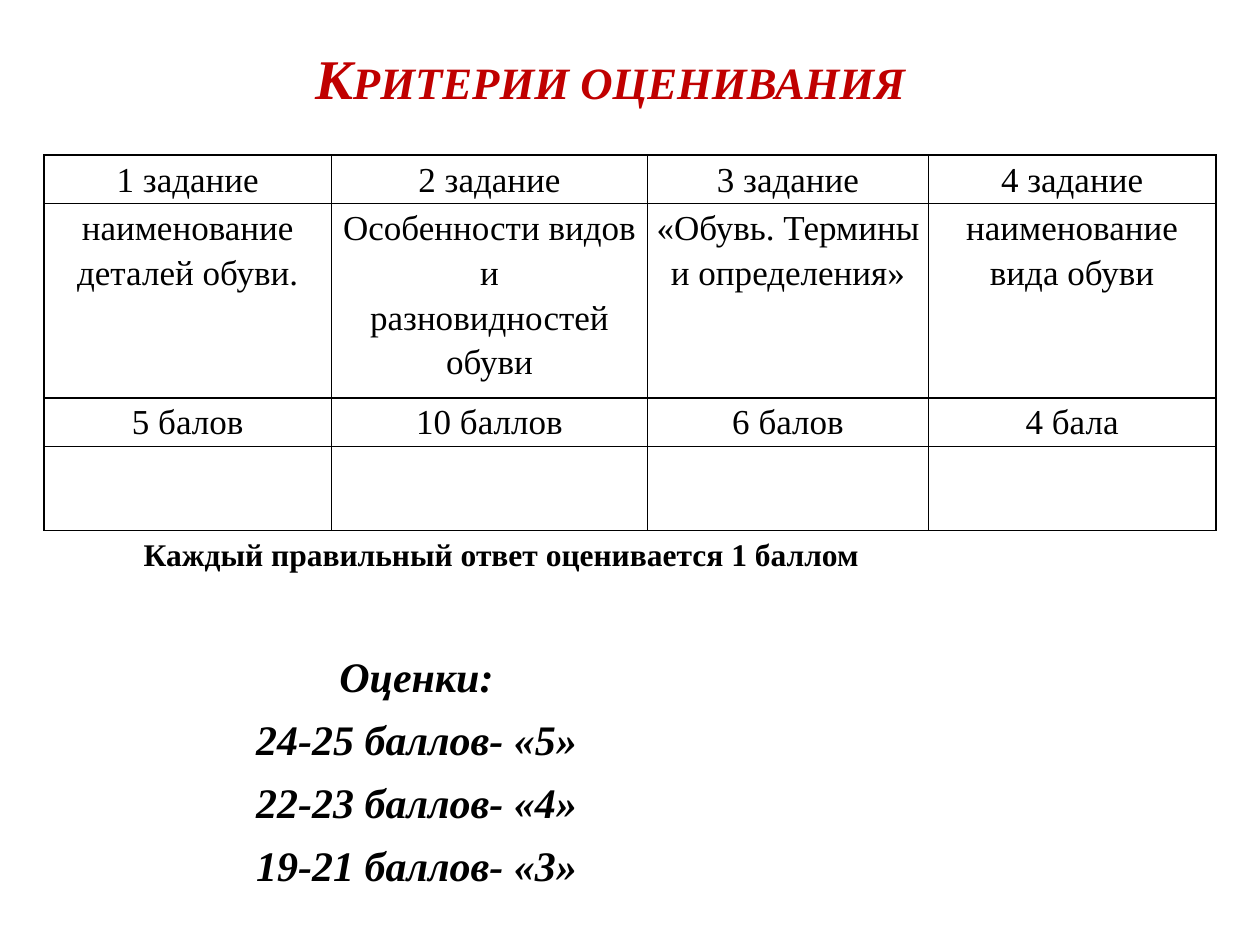
from dataclasses import dataclass

from lxml.etree import SubElement
from pptx import Presentation
from pptx.dml.color import RGBColor
from pptx.enum.text import MSO_ANCHOR, MSO_AUTO_SIZE, PP_ALIGN
from pptx.oxml.ns import qn
from pptx.util import Pt


@dataclass(frozen=True)
class Theme:
    """Colours and type sizes."""
    font: str = "Times New Roman"
    ink: str = "000000"
    accent: str = "C00000"
    title: int = 32
    grades: int = 24
    cell: int = 20
    note: int = 18


class Deck:
    """Holds the theme and the current slide, and draws elements on it."""

    def __init__(self, prs, theme):
        """Add a title-only slide."""
        self.theme = theme
        self.s = prs.slides.add_slide(prs.slide_layouts[5])

    def fill_text(self, tf, lines, size, color=None, indent=0, para=None, **font):
        """Fill a text frame with one formatted paragraph per line."""
        for i, line in enumerate(lines):
            p = tf.paragraphs[0] if i == 0 else tf.add_paragraph()
            for name, value in (para or {}).items():
                setattr(p, name, value)
            if indent:
                p._p.get_or_add_pPr().set("indent", str(Pt(indent)))
            r = p.add_run()
            r.text = line
            look = {"name": self.theme.font, "size": Pt(size), **font}
            for name, value in look.items():
                setattr(r.font, name, value)
            r.font.color.rgb = RGBColor.from_string(color or self.theme.ink)

    def place(self, sp, box, wrap):
        """Set the position and frame format of a text shape."""
        for name, value in zip(("left", "top", "width", "height"), box):
            setattr(sp, name, Pt(value))
        frame = {"word_wrap": wrap, "vertical_anchor": MSO_ANCHOR.TOP,
                 "auto_size": MSO_AUTO_SIZE.SHAPE_TO_FIT_TEXT}
        for name, value in frame.items():
            setattr(sp.text_frame, name, value)
        return sp.text_frame

    def title(self, text, box):
        """Format the title placeholder in small capitals."""
        tf = self.place(self.s.shapes.title, box, False)
        self.fill_text(tf, [text], self.theme.title, self.theme.accent,
                       para={"alignment": PP_ALIGN.LEFT}, bold=True, italic=True)
        tf.paragraphs[0].runs[0]._r.get_or_add_rPr().set("cap", "small")

    def text(self, lines, box, size, **style):
        """Add a wrapping text box."""
        sp = self.s.shapes.add_textbox(*map(Pt, box))
        self.fill_text(self.place(sp, box, True), lines, size, **style)

    def border(self, cell):
        """Draw a thin line on all four sides of a cell."""
        tcPr = cell._tc.get_or_add_tcPr()
        for side in ("a:lnL", "a:lnR", "a:lnT", "a:lnB"):
            ln = SubElement(tcPr, qn(side), w=str(Pt(1)))
            fill = SubElement(ln, qn("a:solidFill"))
            SubElement(fill, qn("a:srgbClr"), val=self.theme.ink)

    def table(self, rows, left, top, widths, heights):
        """Add a plain ruled table; each cell is a list of lines."""
        tbl = self.s.shapes.add_table(
            len(heights), len(widths), Pt(left), Pt(top),
            Pt(sum(widths)), Pt(sum(heights))).table
        tbl.first_row = tbl.horz_banding = False
        for col, width in zip(tbl.columns, widths):
            col.width = Pt(width)
        for row, height in zip(tbl.rows, heights):
            row.height = Pt(height)
        margins = {"margin_left": Pt(5), "margin_right": Pt(5),
                   "margin_top": 0, "margin_bottom": 0}
        centred = {"alignment": PP_ALIGN.CENTER, "line_spacing": 1.15}
        for i, row in enumerate(tbl.rows):
            for j, cell in enumerate(row.cells):
                for name, value in margins.items():
                    setattr(cell, name, value)
                self.border(cell)
                cell.fill.background()
                if i < len(rows):
                    self.fill_text(cell.text_frame, rows[i][j],
                                   self.theme.cell, para=centred)


def main():
    """Build the grading criteria slide."""
    prs = Presentation()
    prs.slide_width, prs.slide_height = Pt(720), Pt(540)
    theme = Theme()
    deck = Deck(prs, theme)
    deck.title("Критерии оценивания", (172.8, 21, 358, 46))
    deck.text(["Оценки:", "24-25 баллов- «5»", "22-23 баллов- «4»",
               "19-21 баллов- «3»"],
              (48, 361, 380, 141), theme.grades, bold=True, italic=True,
              para={"alignment": PP_ALIGN.CENTER, "line_spacing": 1.25})
    deck.text(["Каждый правильный ответ оценивается 1 баллом"],
              (48, 302, 641, 29), theme.note, indent=27, bold=True)
    rows = [
        [[f"{n} задание"] for n in range(1, 5)],
        [["наименование деталей обуви."],
         ["Особенности видов и", "разновидностей обуви"],
         ["«Обувь. Термины и определения»"],
         ["наименование вида обуви"]],
        [["5 балов"], ["10 баллов"], ["6 балов"], ["4 бала"]],
    ]
    deck.table(rows, 25.2, 88.6, (164.2, 180.7, 160.5, 164.2),
               (27.8, 111, 27.8, 48))
    prs.save("out.pptx")


if __name__ == "__main__":
    main()
